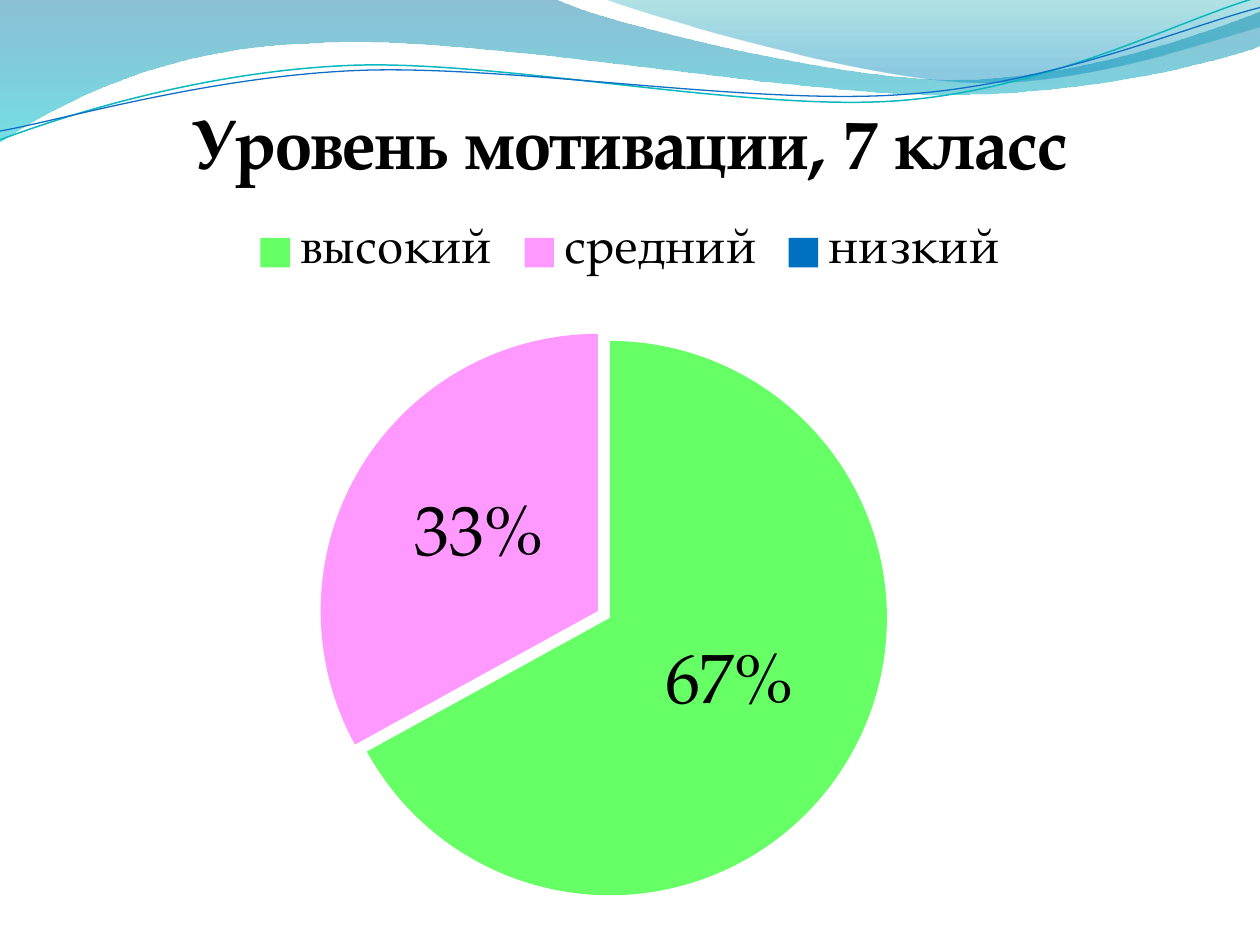
from lxml import etree
from pptx import Presentation
from pptx.chart.data import CategoryChartData as Data
from pptx.dml.color import RGBColor as RGB
from pptx.enum.chart import XL_CHART_TYPE as Kind
from pptx.enum.chart import XL_LABEL_POSITION as Spot
from pptx.enum.chart import XL_LEGEND_POSITION as Side
from pptx.oxml import parse_xml
from pptx.oxml.ns import nsdecls, qn
from pptx.util import Inches, Pt

BLACK = RGB(0x00, 0x00, 0x00)
GREEN = RGB(0x66, 0xFF, 0x66)
PINK = RGB(0xFF, 0x99, 0xFF)
BLUE = RGB(0x00, 0x70, 0xC0)
DEEP = RGB(0x00, 0x74, 0xA1)
AQUA = RGB(0x00, 0xC6, 0xCF)
TEAL = RGB(0x00, 0xA1, 0xA9)
SKY = RGB(0x00, 0x8B, 0xBF)
CYAN = RGB(0x0A, 0xB8, 0xBF)
NAVY = RGB(0x0F, 0x6F, 0xC6)
FONT = "TeX Gyre Pagella"

deck = Presentation()
deck.slide_width, deck.slide_height = Inches(10), Inches(7.5)
slide = deck.slides.add_slide(deck.slide_layouts[6])
COL = deck.slide_width / 10  # one grid column, also used as the row


def draw(start, parts, closed):
    """Outline of straight parts (x, y) and Bezier parts (x1, y1, x2, y2, x, y)."""
    pts = [(p[i] * COL, p[i + 1] * COL) for p in parts for i in range(0, len(p), 2)]
    pen = slide.shapes.build_freeform(start[0] * COL, start[1] * COL)
    pen.add_line_segments(pts, close=closed)
    shape = pen.convert_to_shape()
    shape.shadow.inherit = False
    # Join each three points of a Bezier part into one curve
    legs = shape._element.spPr.iter(qn("a:lnTo"))
    legs = iter(list(legs))
    for part in parts:
        first = next(legs)
        if len(part) == 6:
            first.tag = qn("a:cubicBezTo")
            for leg in (next(legs), next(legs)):
                first.append(leg[0])
                leg.getparent().remove(leg)
    return shape


# Waves: start, outline, gradient stops (place, colour, opacity in %)
waves = [
    ((0, 0),
     [(4.4, -0.01), (4.76, 0.17, 6.64, 0.63, 7.58, 0.63),
      (8.53, 0.63, 9.58, 0.26, 10, 0.09), (10.01, 0.36),
      (9.83, 0.44, 8.7, 0.76, 7.46, 0.75), (6.22, 0.75, 3.82, 0.28, 2.57, 0.34),
      (1.29, 0.36, 0.46, 0.83, -0.01, 1.13), (0, 0)],
     [(0, DEEP, 45), (1, AQUA, 55)]),
    ((4.79, -0.01),
     [(5.09, 0.11, 6.82, 0.62, 7.69, 0.65), (8.56, 0.69, 9.61, 0.32, 10, 0.21),
      (10, 0), (4.79, -0.01)],
     [(0, TEAL, 30), (0.8, SKY, 45)]),
]
for start, parts, stops in waves:
    wave = draw(start, parts, True)
    wave.line.fill.background()
    wave.fill.gradient()
    wave.fill.gradient_angle = 270
    for stop, (place, tint, alpha) in zip(wave.fill.gradient_stops, stops):
        stop.position = place
        stop.color.rgb = tint
    tints = wave._element.spPr.iter(qn("a:srgbClr"))
    for node, (place, tint, alpha) in zip(tints, stops):
        etree.SubElement(node, qn("a:alpha"), val=str(alpha * 1000))

# Thin curves below the waves
curves = [
    ((0, 1.11),
     [(0.48, 0.93, 1.58, 0.57, 2.77, 0.52), (3.95, 0.47, 5.93, 0.89, 7.13, 0.8),
      (8.33, 0.71, 9.38, 0.15, 9.98, -0.02)], CYAN, 0.85),
    ((0, 1.04),
     [(0.47, 0.96, 1.64, 0.61, 2.83, 0.56), (4.03, 0.51, 5.97, 0.84, 7.17, 0.75),
      (8.36, 0.67, 9.41, 0.21, 10, 0.06)], NAVY, 0.75),
]
for start, parts, tint, width in curves:
    curve = draw(start, parts, False)
    curve.fill.background()
    curve.line.color.rgb = tint
    curve.line.width = Pt(width)

# Pie chart
data = Data(number_format="General")
data.categories = ["высокий", "средний", "низкий"]
data.add_series("Series 1", (67, 33, 0))
WIDE, HIGH = 9, 6.69
box = [int(n * COL) for n in (0.5, 0.6, WIDE, HIGH)]
chart = slide.shapes.add_chart(Kind.PIE, *box, data).chart
chart.font.name, chart.font.size = FONT, Pt(10)
chart.font.color.rgb = BLACK

# Title and legend
chart.has_title = True
title = chart.chart_title.text_frame
title.text = "Уровень мотивации, 7 класс"
font = title.paragraphs[0].runs[0].font
font.name, font.size, font.bold = FONT, Pt(40), True
font.color.rgb = BLACK
chart.has_legend = True
chart.legend.position = Side.TOP
chart.legend.include_in_layout = False
chart.legend.font.name, chart.legend.font.size = FONT, Pt(28)
chart.legend.font.color.rgb = BLACK

# Slices, the first one pulled out
plot = chart.plots[0]
plot.vary_by_categories = True
pie = plot.series[0]
for i, tint in enumerate((GREEN, PINK, BLUE)):
    look = pie.points[i].format
    look.fill.solid()
    look.fill.fore_color.rgb = tint
    look.line.fill.background()
slot = pie._element.find(qn("c:dPt"))
slot.find(qn("c:spPr")).addprevious(
    parse_xml(f'<c:explosion {nsdecls("c")} val="5"/>'))

# Percent labels, none on the empty slice
labels = pie.data_labels
labels.show_percentage, labels.show_value = True, False
labels.number_format, labels.number_format_is_linked = "0%", False
labels.position = Spot.CENTER
labels.font.name, labels.font.size = FONT, Pt(40)
labels.font.color.rgb = BLACK
labels._element.insert(0, parse_xml(
    f'<c:dLbl {nsdecls("c")}><c:idx val="2"/><c:delete val="1"/></c:dLbl>'))

# Place of the pie, as shares of the chart
area = chart._chartSpace.chart.plotArea
for old in area.findall(qn("c:layout")):
    area.remove(old)
modes = '<c:layoutTarget val="inner"/><c:xMode val="edge"/><c:yMode val="edge"/>'
shares = zip("xywh", (0.29 / WIDE, 2.05 / HIGH, 7.91 / WIDE, 4.4 / HIGH))
sides = "".join(f'<c:{k} val="{v}"/>' for k, v in shares)
area.insert(0, parse_xml(
    f'<c:layout {nsdecls("c")}><c:manualLayout>{modes}{sides}'
    '</c:manualLayout></c:layout>'))

deck.save("out.pptx")
